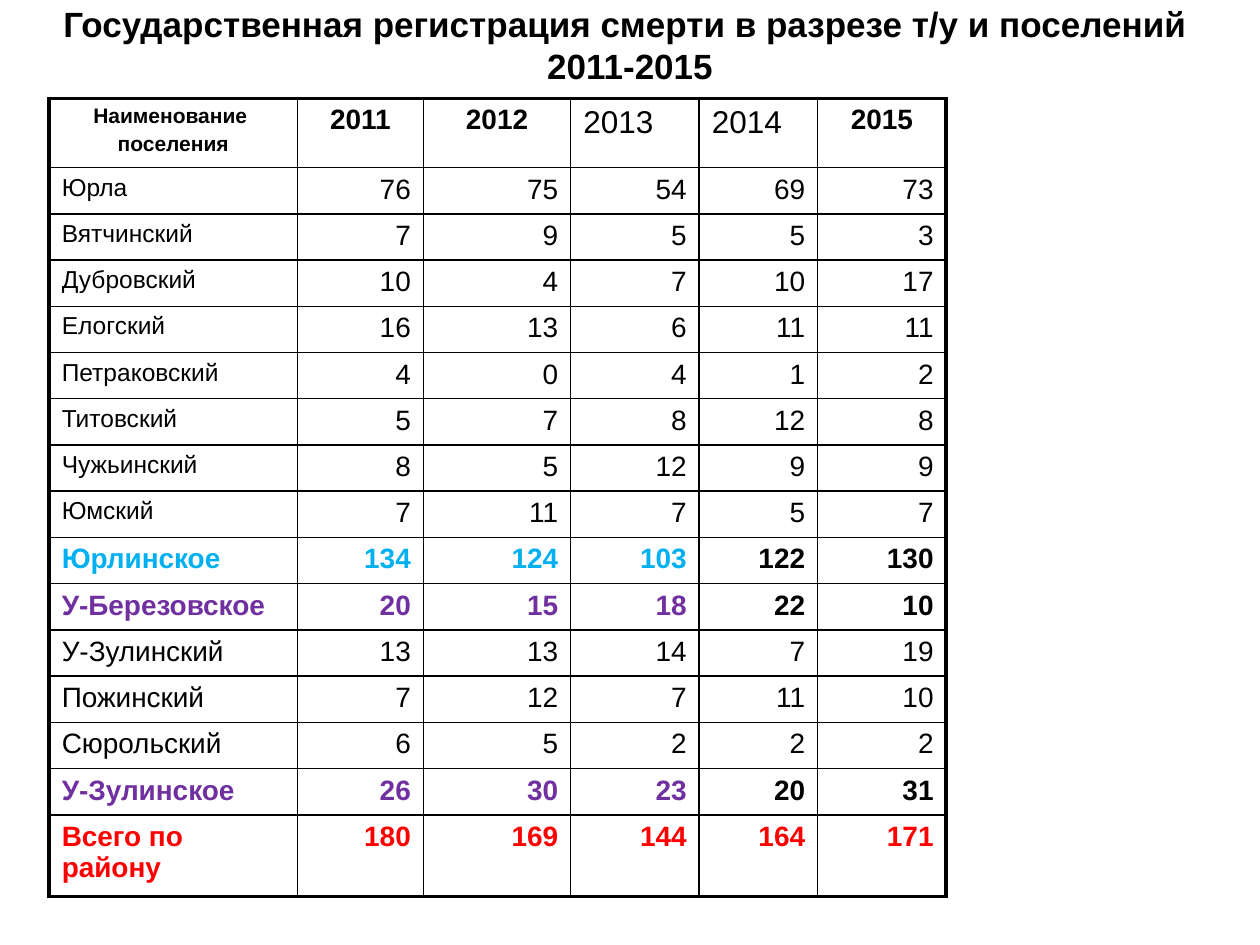
from lxml.etree import SubElement
from pptx import Presentation
from pptx.dml.color import RGBColor
from pptx.enum.text import MSO_ANCHOR, MSO_AUTO_SIZE, PP_ALIGN
from pptx.oxml.ns import qn
from pptx.util import Inches, Pt

BLACK, BLUE, PURPLE, RED = "000000", "00B0F0", "7030A0", "FF0000"


def write(tf, text, size=16, bold=False, color=BLACK, align=PP_ALIGN.LEFT, gap=0):
    """Fill a text frame, one paragraph per line; a vertical tab breaks a line."""
    for i, line in enumerate(text.split("\n")):
        p = tf.add_paragraph() if i else tf.paragraphs[0]
        p.text = line
        p.alignment = align
        p.space_before = Pt(gap if i else 0)
        for r in p.runs:
            r.font.name = "Arial"
            r.font.size = Pt(size)
            r.font.bold = bold
            r.font.color.rgb = RGBColor.from_string(color)


def set_borders(cell, widths):
    """Draw the left, right, top and bottom cell borders, widths in points."""
    tc_pr = cell._tc.get_or_add_tcPr()
    for i, (side, width) in enumerate(zip(("lnL", "lnR", "lnT", "lnB"), widths)):
        ln = tc_pr.makeelement(qn(f"a:{side}"), {"w": str(Pt(width))})
        fill = SubElement(ln, qn("a:solidFill"))
        SubElement(fill, qn("a:srgbClr"), val=BLACK)
        tc_pr.insert(i, ln)


prs = Presentation()
prs.slide_width, prs.slide_height = Inches(10), Inches(7.5)
s = prs.slides.add_slide(prs.slide_layouts[5])

# Title
title = s.shapes.title
title.left, title.top = Inches(0), Inches(0)
title.width, title.height = Inches(10), Inches(0.7)
tf = title.text_frame
tf.word_wrap = True
tf.auto_size = MSO_AUTO_SIZE.NONE
tf.vertical_anchor = MSO_ANCHOR.MIDDLE
write(tf, "Государственная регистрация смерти в разрезе т/у и поселений \v2011-2015",
      size=20, bold=True, align=PP_ALIGN.CENTER)

# Table data: name, yearly values
header = ["Наименование \nпоселения", 2011, 2012, 2013, 2014, 2015]
rows = [
    ("Юрла", 76, 75, 54, 69, 73),
    ("Вятчинский", 7, 9, 5, 5, 3),
    ("Дубровский", 10, 4, 7, 10, 17),
    ("Елогский", 16, 13, 6, 11, 11),
    ("Петраковский", 4, 0, 4, 1, 2),
    ("Титовский", 5, 7, 8, 12, 8),
    ("Чужьинский", 8, 5, 12, 9, 9),
    ("Юмский", 7, 11, 7, 5, 7),
    ("Юрлинское", 134, 124, 103, 122, 130),
    ("У-Березовское", 20, 15, 18, 22, 10),
    ("У-Зулинский", 13, 13, 14, 7, 19),
    ("Пожинский", 7, 12, 7, 11, 10),
    ("Сюрольский", 6, 5, 2, 2, 2),
    ("У-Зулинское", 26, 30, 23, 20, 31),
    ("Всего по району", 180, 169, 144, 164, 171),
]
summary_colors = {"Юрлинское": BLUE, "У-Березовское": PURPLE,
                  "У-Зулинское": PURPLE, "Всего по району": RED}
small_names = [row[0] for row in rows[:8]]

# Table grid
col_widths = [1.97, 1, 1.17, 1.02, 0.94, 1.02]
height, head_height, total_height = 6.34, 0.55, 0.65
row_height = (height - head_height - total_height) / (len(rows) - 1)
row_heights = [head_height] + [row_height] * (len(rows) - 1) + [total_height]
last_row, last_col = len(rows), len(header) - 1
table = s.shapes.add_table(last_row + 1, last_col + 1, Inches(0.39), Inches(0.78),
                           Inches(sum(col_widths)), Inches(height)).table
table.first_row = table.horz_banding = False
for column, width in zip(table.columns, col_widths):
    column.width = Inches(width)
for row, row_size in zip(table.rows, row_heights):
    row.height = Inches(row_size)

# Header cells
for c, text in enumerate(header):
    tf = table.cell(0, c).text_frame
    if text in (2013, 2014):
        write(tf, str(text), size=18)
    else:
        write(tf, str(text), size=16 if c else 12, bold=True,
              align=PP_ALIGN.CENTER, gap=2.4)

# Body cells: summary rows are bold and coloured
for i, (name, *values) in enumerate(rows, start=1):
    color = summary_colors.get(name, BLACK)
    bold = name in summary_colors
    write(table.cell(i, 0).text_frame, name, size=14 if name in small_names else 16,
          bold=bold, color=color)
    for year, value in zip(header[1:], values):
        plain = year >= 2014 and color != RED
        write(table.cell(i, year - 2010).text_frame, str(value), bold=bold,
              color=BLACK if plain else color, align=PP_ALIGN.RIGHT)

# Cell fills and borders: a thick frame around a thin grid
for i in range(last_row + 1):
    for c in range(last_col + 1):
        cell = table.cell(i, c)
        cell.fill.background()
        edges = (c == 0, c == last_col, i == 0, i == last_row)
        set_borders(cell, [2.25 if edge else 1 for edge in edges])

prs.save("out.pptx")
